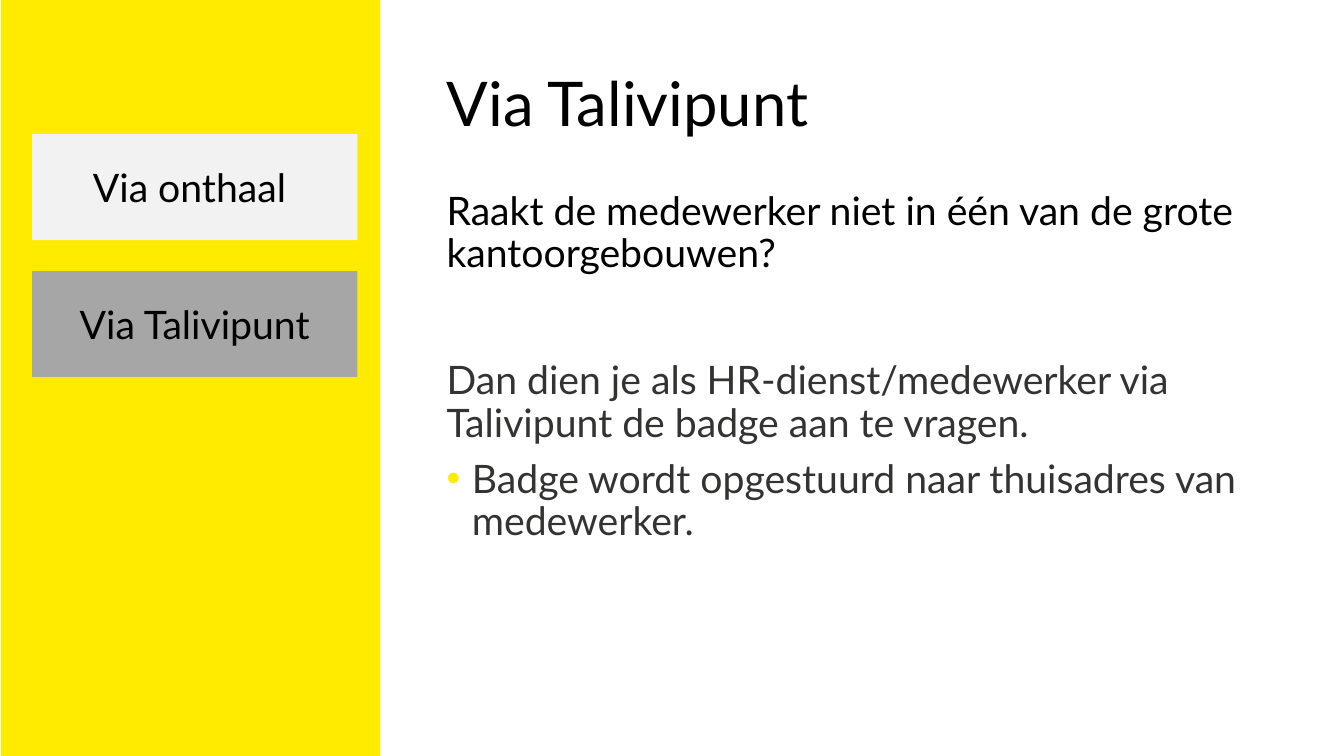
from dataclasses import dataclass

from pptx import Presentation
from pptx.dml.color import RGBColor
from pptx.enum import shapes, text
from pptx.oxml import ns
from pptx.util import Cm, Pt
from lxml import etree


@dataclass(frozen=True)
class Theme:
    font: str = "Lato"
    title_size: int = 44
    body_size: int = 28
    black: str = "000000"
    body: str = "333332"
    accent: str = "FFEB00"
    idle: str = "F2F2F2"
    active: str = "A6A6A6"


THEME = Theme()
TABS = [("Via onthaal", THEME.idle, 0.13), ("Via Talivipunt", THEME.active, 0.26)]
# wording, colour, space before (pt), bulleted
BODY = [
    ("Raakt de medewerker niet in één van de grote kantoorgebouwen?",
     THEME.black, 10, False),
    # the answer stands two lines below the question
    ("Dan dien je als HR-dienst/medewerker via Talivipunt de badge aan te vragen.",
     THEME.body, 60.5, False),
    ("Badge wordt opgestuurd naar thuisadres van medewerker.",
     THEME.body, 10, True),
]


def apply(target, values):
    for name, value in values.items():
        setattr(target, name, value)


def place(shape, box):
    apply(shape, dict(zip(("left", "top", "width", "height"), map(Cm, box))))


def write(paragraph, wording, size, colour, **layout):
    run = paragraph.add_run()
    run.text = wording
    apply(run.font, {"name": THEME.font, "size": Pt(size)})
    run.font.color.rgb = RGBColor.from_string(colour)
    apply(paragraph, layout)


def set_bullet(paragraph, bulleted):
    """Give the paragraph an accent bullet with hanging indent, or none."""
    props = paragraph._p.get_or_add_pPr()
    indent = Cm(0.64) if bulleted else 0
    props.set("marL", str(indent))
    props.set("indent", str(-indent))
    if not bulleted:
        etree.SubElement(props, ns.qn("a:buNone"))
        return
    colour = etree.SubElement(props, ns.qn("a:buClr"))
    etree.SubElement(colour, ns.qn("a:srgbClr"), val=THEME.accent)
    etree.SubElement(props, ns.qn("a:buFont"), typeface="Arial")
    etree.SubElement(props, ns.qn("a:buChar"), char="•")


def add_block(slide, box, colour):
    block = slide.shapes.add_shape(shapes.MSO_SHAPE.RECTANGLE, *map(Cm, box))
    block.shadow.inherit = False
    block.fill.solid()
    block.fill.fore_color.rgb = RGBColor.from_string(colour)
    block.line.fill.background()
    return block


def add_tab(slide, box, wording, colour, inset):
    left, top, _, _ = box
    add_block(slide, box, colour)
    label = add_block(slide, (left + inset, top + 0.61, 7.67, 1.45), colour)
    apply(label.text_frame, {"word_wrap": True,
                             "auto_size": text.MSO_AUTO_SIZE.SHAPE_TO_FIT_TEXT})
    write(label.text_frame.paragraphs[0], wording, THEME.body_size, THEME.black,
          alignment=text.PP_ALIGN.CENTER)


def add_sidebar(slide, box):
    left, top, _, _ = box
    add_block(slide, box, THEME.accent)
    for row, (wording, colour, inset) in enumerate(TABS):
        tab_box = (left + 0.78, top + 3.38 + row * 3.45, 8.2, 2.67)
        add_tab(slide, tab_box, wording, colour, inset)


def fill_title(title, box):
    place(title, box)
    apply(title.text_frame, {"vertical_anchor": text.MSO_ANCHOR.MIDDLE,
                             "auto_size": text.MSO_AUTO_SIZE.NONE})
    write(title.text_frame.paragraphs[0], "Via Talivipunt", THEME.title_size,
          THEME.black, alignment=text.PP_ALIGN.LEFT, line_spacing=0.9)


def fill_body(body, box):
    place(body, box)
    frame = body.text_frame
    frame.auto_size = text.MSO_AUTO_SIZE.NONE
    for index, (wording, colour, before, bulleted) in enumerate(BODY):
        paragraph = frame.add_paragraph() if index else frame.paragraphs[0]
        write(paragraph, wording, THEME.body_size, colour,
              line_spacing=0.9, space_before=Pt(before))
        set_bullet(paragraph, bulleted)


def main():
    deck = Presentation()
    apply(deck, {"slide_width": Cm(33.87), "slide_height": Cm(19.05)})
    slide = deck.slides.add_slide(deck.slide_layouts[1])
    fill_title(slide.shapes.title, (11, 0.84, 29.21, 3.68))
    fill_body(slide.placeholders[1], (11, 4.7, 21.46, 12.09))
    add_sidebar(slide, (0.03, 0, 9.55, 19.05))
    deck.save("out.pptx")


if __name__ == "__main__":
    main()
